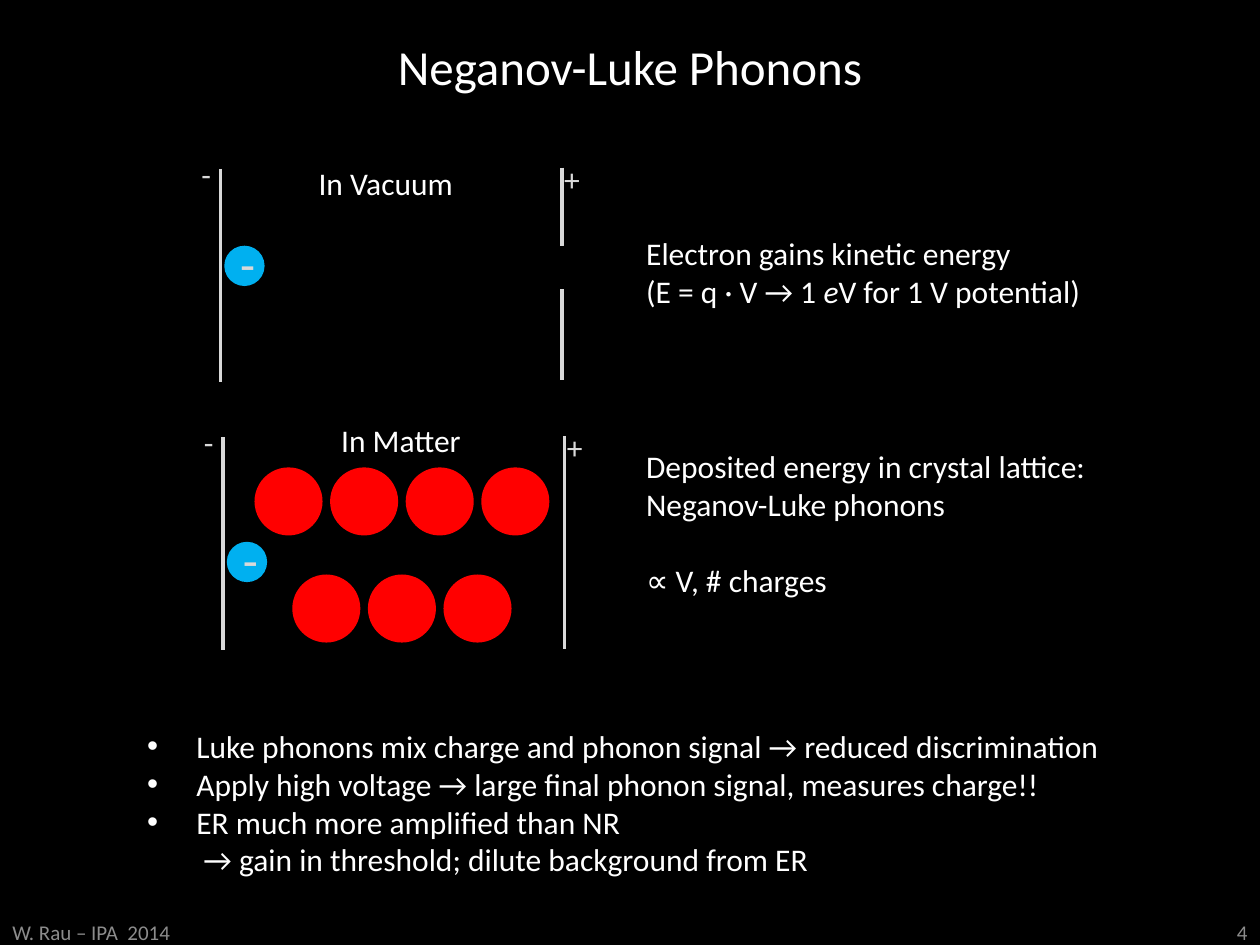
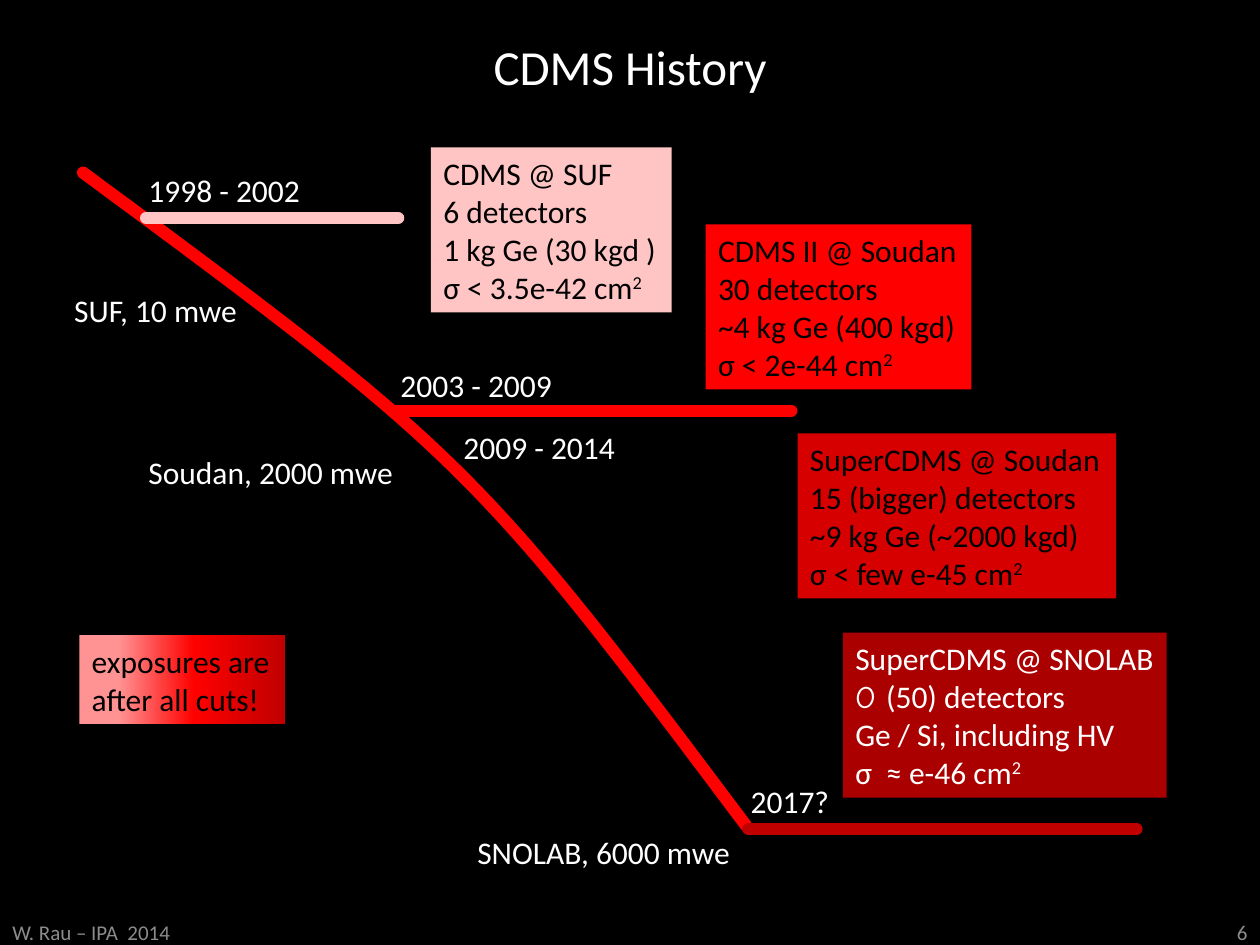
import copy

import lxml.etree
import pptx
import pptx.dml.color
import pptx.enum.shapes
import pptx.enum.text
import pptx.oxml.ns
import pptx.util

Inches, Pt = pptx.util.Inches, pptx.util.Pt
ALIGN = pptx.enum.text.PP_ALIGN
SHAPE = pptx.enum.shapes.MSO_SHAPE
MIDDLE = pptx.enum.text.MSO_ANCHOR.MIDDLE
qn = pptx.oxml.ns.qn

BLACK, WHITE, GREY = "000000", "FFFFFF", "8C8C8C"
PLATE, ELECTRON = "D9D9D9", "00B0F0"
PINK, RED, DARK_RED = "FFC5C5", "FF0000", "C00000"
SQUARED = ("2", {"baseline": "30000"})


def rgb(value):
    return pptx.dml.color.RGBColor.from_string(value)


def add_runs(p, runs, size, color):
    """Each run is a string or a (string, style) pair; a newline breaks the line."""
    for run in runs:
        text, style = (run, {}) if isinstance(run, str) else run
        for i, line in enumerate(text.split("\n")):
            if i:
                p.add_line_break()
            if not line:
                continue
            r = p.add_run()
            r.text = line
            r.font.name = style.get("font", "Calibri")
            r.font.size = Pt(size)
            r.font.color.rgb = rgb(color)
            if style.get("italic"):
                r.font.italic = True
            if "baseline" in style:
                r.font._element.set("baseline", style["baseline"])


def write(tf, paragraphs, size=18, color=WHITE, align=ALIGN.LEFT):
    for i, runs in enumerate(paragraphs):
        p = tf.paragraphs[0] if i == 0 else tf.add_paragraph()
        p.alignment = align
        add_runs(p, runs, size, color)


def add_text(slide, box, paragraphs, wrap=False, **style):
    tf = slide.shapes.add_textbox(*map(Inches, box)).text_frame
    tf.word_wrap = wrap
    write(tf, paragraphs, **style)
    return tf


def add_shape(slide, kind, box, color):
    sp = slide.shapes.add_shape(kind, *map(Inches, box))
    sp.shadow.inherit = False
    sp.fill.solid()
    sp.fill.fore_color.rgb = rgb(color)
    sp.line.fill.background()
    return sp


def add_line(slide, x1, y1, x2, y2, color, width):
    straight = pptx.enum.shapes.MSO_CONNECTOR.STRAIGHT
    line = slide.shapes.add_connector(straight, *map(Inches, (x1, y1, x2, y2)))
    line.line.color.rgb = rgb(color)
    line.line.width = Pt(width)
    lxml.etree.SubElement(line._element.spPr, qn("a:effectLst"))
    return line


def round_caps(shape):
    shape.line._get_or_add_ln().set("cap", "rnd")


def add_base_slide(prs, title, title_width, number):
    """Add a slide with the shared title and footer."""
    slide = prs.slides.add_slide(prs.slide_layouts[6])
    tf = add_text(slide, (5 - title_width / 2, 0.24, title_width, 0.57),
                  [[title]], size=28, align=ALIGN.CENTER)
    tf.paragraphs[0].space_before = Pt(6)
    footers = [(7.67, 2.33, number, ALIGN.RIGHT),
               (0, 3.17, "W. Rau – IPA  2014", ALIGN.LEFT)]
    for left, width, text, align in footers:
        tf = add_text(slide, (left, 7.29, width, 0.21), [[text]], wrap=True,
                      size=12, color=GREY, align=align)
        tf.vertical_anchor = MIDDLE
        tf.margin_top = tf.margin_bottom = 0
    return slide


def add_plates(slide, left, top):
    """Draw the negative and the positive electrode."""
    plates = [("-", 0.25, 0.16, 0, 0, 0.34), ("+", 2.96, 0.15, 2.88, 0.04, 0.33)]
    for sign, x, y, sign_x, sign_y, sign_width in plates:
        add_line(slide, left + x, top + y, left + x, top + y + 1.69, PLATE, 2.25)
        add_text(slide, (left + sign_x, top + sign_y, sign_width, 0.4),
                 [[sign]], color=PLATE)


def add_electron(slide, left, top):
    sp = add_shape(slide, SHAPE.OVAL, (left, top, 0.32, 0.32), ELECTRON)
    tf = sp.text_frame
    tf.margin_left, tf.margin_top = Inches(0.08), 0
    tf.margin_right, tf.margin_bottom = Inches(0.1), Inches(0.05)
    tf.vertical_anchor = MIDDLE
    write(tf, [["-"]], size=28, color=PLATE, align=ALIGN.CENTER)


def add_vacuum(slide, left, top):
    add_plates(slide, left, top)
    add_line(slide, left + 2.96, top + 0.77, left + 2.96, top + 1.11, BLACK, 2.25)
    add_electron(slide, left + 0.28, top + 0.77)
    add_text(slide, (left + 0.93, top + 0.07, 1.28, 0.4), [["In Vacuum"]])


def add_matter(slide, left, top):
    for row, count in enumerate((4, 3)):
        for col in range(count):
            box = (left + 0.5 + 0.3 * row + 0.6 * col, top + 0.4 + 0.85 * row,
                   0.54, 0.54)
            add_shape(slide, SHAPE.OVAL, box, RED)
    add_plates(slide, left, top)
    add_electron(slide, left + 0.28, top + 0.99)
    add_text(slide, (left + 1.09, top - 0.02, 1.17, 0.4), [["In Matter"]])


def add_bullets(slide, box, items):
    tf = add_text(slide, box, [[item] for item in items])
    for p in tf.paragraphs:
        pPr = p._p.get_or_add_pPr()
        pPr.set("marL", str(Inches(0.39)))
        pPr.set("indent", str(-Inches(0.39)))
        lxml.etree.SubElement(pPr, qn("a:buFont"), typeface="Arial")
        lxml.etree.SubElement(pPr, qn("a:buChar"), char="•")


def build_phonons(prs):
    slide = add_base_slide(prs, "Neganov-Luke Phonons", 3.94, "4")
    add_vacuum(slide, 1.5, 1.18)
    add_matter(slide, 1.52, 3.31)
    add_text(slide, (5.03, 1.81, 3.71, 0.71), [
        ["Electron gains kinetic energy"],
        ["(E = q · V → 1 ", ("e", {"italic": True}), "V for 1 V potential)"]])
    tf = add_text(slide, (5.03, 3.5, 3.74, 1.31), [
        ["Deposited energy in crystal lattice:"],
        ["Neganov-Luke phonons"],
        ["∝ V, # charges"]])
    tf.paragraphs[2].space_before = Pt(22)
    add_bullets(slide, (1.07, 5.72, 7.87, 1.31), [
        "Luke phonons mix charge and phonon signal → reduced discrimination",
        "Apply high voltage → large final phonon signal, measures charge!!",
        "ER much more amplified than NR\n"
        " → gain in threshold; dilute background from ER"])


def add_depth_curve(slide, points, steps=48):
    """Draw a cubic Bezier curve through short segments."""
    def at(t):
        weights = ((1 - t) ** 3, 3 * t * (1 - t) ** 2, 3 * t * t * (1 - t), t ** 3)
        return tuple(Inches(sum(w * pt[axis] for w, pt in zip(weights, points)))
                     for axis in (0, 1))

    builder = slide.shapes.build_freeform(*at(0))
    builder.add_line_segments([at(i / steps) for i in range(1, steps + 1)],
                              close=False)
    sp = builder.convert_to_shape()
    sp.shadow.inherit = False
    sp.fill.background()
    sp.line.color.rgb = rgb(RED)
    sp.line.width = Pt(7)
    round_caps(sp)


def add_info(slide, box, runs, color, text_color=BLACK, opacity=100):
    sp = add_shape(slide, SHAPE.RECTANGLE, box, color)
    if opacity < 100:
        clr = sp._element.spPr.find(".//" + qn("a:srgbClr"))
        lxml.etree.SubElement(clr, qn("a:alpha"), val=str(opacity * 1000))
    sp.text_frame.word_wrap = False
    write(sp.text_frame, [runs], color=text_color)
    return sp


def add_period(slide, left, top, width, text, bar=None):
    """Place a period label and, if bar is (left, length, color), the bar below it."""
    if bar:
        x, length, color = bar
        y = top + (0.42 if color != RED else 0.4)
        round_caps(add_line(slide, x, y, x + length, y, color, 7))
    add_text(slide, (left, top, width, 0.4), [[text]])


def add_gradient_note(slide, box, text):
    sp = add_info(slide, box, [text], RED)
    sp.fill.gradient()
    sp.fill.gradient_angle = 0
    stops = sp._element.spPr.find(".//" + qn("a:gsLst"))
    stops.append(copy.deepcopy(stops[-1]))
    shades = [(0.19, "FF9393"), (0.56, RED), (1, DARK_RED)]
    for stop, (position, color) in zip(sp.fill.gradient_stops, shades):
        stop.position = position
        stop.color.rgb = rgb(color)


def build_history(prs):
    slide = add_base_slide(prs, "CDMS History", 2.39, "6")
    add_depth_curve(slide, [(0.66, 1.37), (3.68, 3.6), (3.79, 3.71), (5.92, 6.55)])
    sites = [(0.49, 2.26, 1.51, "SUF, 10 mwe"),
             (1.08, 3.55, 2.17, "Soudan, 2000 mwe"),
             (3.69, 6.56, 2.23, "SNOLAB, 6000 mwe")]
    for left, top, width, name in sites:
        add_text(slide, (left, top, width, 0.4), [[name]])

    add_period(slide, 1.08, 1.31, 1.42, "1998 - 2002", (1.16, 2, PINK))
    add_period(slide, 3.08, 2.86, 1.42, "2003 - 2009", (3.12, 3.16, RED))
    add_period(slide, 3.58, 3.35, 1.42, "2009 - 2014")
    add_period(slide, 5.86, 6.16, 0.83, "2017?", (5.94, 3.08, DARK_RED))

    add_info(slide, (3.42, 1.17, 1.91, 1.31),
             ["CDMS @ SUF\n6 detectors\n1 kg Ge (30 kgd )\nσ < 3.5e-42 cm",
              SQUARED], PINK)
    add_info(slide, (5.6, 1.78, 2.11, 1.31),
             ["CDMS II @ Soudan\n30 detectors\n~4 kg Ge (400 kgd)\nσ < 2e-44 cm",
              SQUARED], RED)
    add_info(slide, (6.33, 3.44, 2.53, 1.31),
             ["SuperCDMS @ Soudan\n15 (bigger) detectors\n~9 kg Ge (~2000 kgd)\n"
              "σ < few e-45 cm", SQUARED], RED, opacity=84)
    sp = add_info(slide, (6.69, 5.02, 2.57, 1.31),
                  ["SuperCDMS @ SNOLAB\n", ("O ", {"font": "Comic Neue"}),
                   "(50) detectors\nGe / Si, including HV\nσ  ≈ e-46 cm", SQUARED],
                  DARK_RED, WHITE, 89)
    sp.text_frame.margin_right = Inches(0.02)
    add_gradient_note(slide, (0.63, 5.04, 1.63, 0.71),
                      "exposures are\nafter all cuts!")


def main():
    prs = pptx.Presentation()
    prs.slide_width, prs.slide_height = Inches(10), Inches(7.5)
    background = prs.slide_master.background.fill
    background.solid()
    background.fore_color.rgb = rgb(BLACK)
    build_phonons(prs)
    build_history(prs)
    prs.save("out.pptx")


if __name__ == "__main__":
    main()
